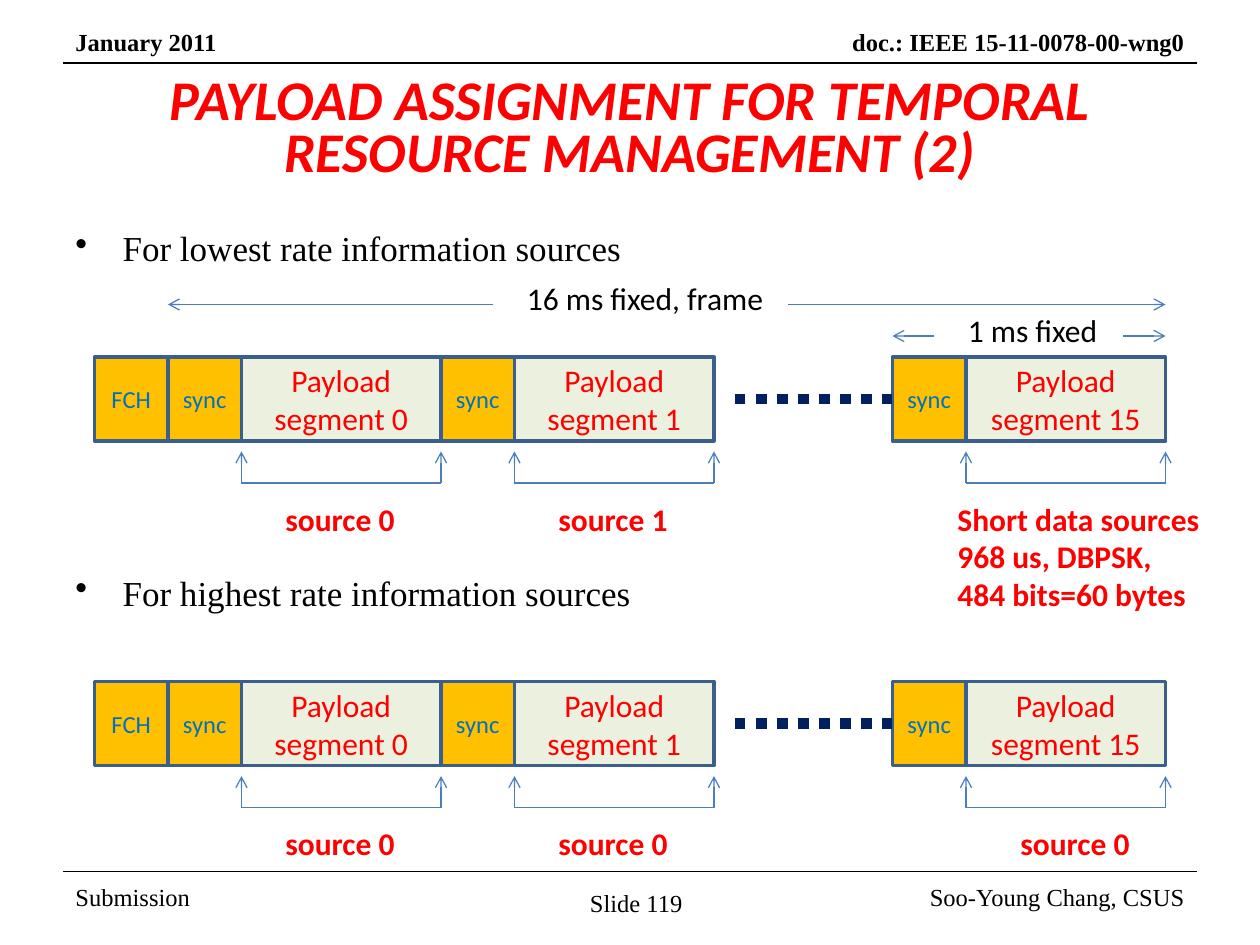
"""Build the slide on payload assignment for temporal resource management."""
import pptx
import pptx.dml.color
import pptx.enum.dml
import pptx.enum.shapes
import pptx.enum.text
import pptx.oxml
import pptx.oxml.ns
import pptx.util

Pt = pptx.util.Pt
ALIGN = pptx.enum.text.PP_ALIGN
ANCHOR = pptx.enum.text.MSO_ANCHOR
SERIF, SANS = "Times New Roman", "Calibri"
BLACK, RED, BLUE = "000000", "FF0000", "4B7EBC"

TITLE = "PAYLOAD ASSIGNMENT FOR TEMPORAL RESOURCE MANAGEMENT (2)"
BULLETS = [("For lowest rate information sources", 4), ("For highest rate information sources", 173)]
MARGINS = [
    ("January 2011", 36, 12, 102, 24, ALIGN.LEFT, True),
    ("doc.: IEEE 15-11-0078-00-wng0", 426, 12, 258, 24, ALIGN.RIGHT, True),
    ("Submission", 36, 498, 168, 29, ALIGN.LEFT, False),
    ("Soo-Young Chang, CSUS", 516, 498, 168, 29, ALIGN.RIGHT, False),
]
RULES = [36, 498]
SPANS = [
    ("16 ms fixed, frame", 294, 156, 151, 174, [(450, 666), (282, 96)]),
    ("1 ms fixed", 546, 174, 89, 192, [(534, 510), (642, 666)]),
]
SYNC_WIDTH, PAYLOAD_WIDTH, CELL_HEIGHT = 42, 114, 48
SEGMENTS = [(96, "Payload segment 0"), (252, "Payload segment 1"), (510, "Payload segment 15")]
SHORT_DATA = "Short data sources\n968 us, DBPSK,\n484 bits=60 bytes"
FRAMES = [
    (204, [("source 0", 18, 77), ("source 1", 18, 77), (SHORT_DATA, -12, 154)]),
    (389.5, [("source 0", 18, 77), ("source 0", 18, 77), ("source 0", 24, 77)]),
]


def color(value):
    return pptx.dml.color.RGBColor.from_string(value)


def write(shape, text, size, font, ink, align=ALIGN.LEFT, anchor=ANCHOR.TOP, bold=False, wrap=True):
    frame = shape.text_frame
    frame.text = text
    frame.word_wrap = wrap
    frame.vertical_anchor = anchor
    if not wrap:
        frame.auto_size = pptx.enum.text.MSO_AUTO_SIZE.SHAPE_TO_FIT_TEXT
    for para in frame.paragraphs:
        para.alignment = align
        for span in para.runs:
            span.font.size, span.font.name, span.font.bold = Pt(size), font, bold
            span.font.color.rgb = color(ink)
    return frame


def add_text(page, text, left, top, width, height, *style, **options):
    box = page.shapes.add_textbox(Pt(left), Pt(top), Pt(width), Pt(height))
    return write(box, text, *style, **options)


def add_line(page, start, end, ink=BLUE, width=0.75, arrow=False):
    line = page.shapes.add_connector(
        pptx.enum.shapes.MSO_CONNECTOR.STRAIGHT, *(Pt(value) for value in start + end))
    line.line.color.rgb = color(ink)
    line.line.width = Pt(width)
    if arrow:
        tail = pptx.oxml.parse_xml(f'<a:tailEnd {pptx.oxml.ns.nsdecls("a")} type="arrow"/>')
        line.line._get_or_add_ln().append(tail)
    line._element.spPr.append(pptx.oxml.parse_xml(f'<a:effectLst {pptx.oxml.ns.nsdecls("a")}/>'))
    return line


def add_cell(page, text, left, top, width, fill, size, ink):
    cell = page.shapes.add_shape(
        pptx.enum.shapes.MSO_SHAPE.RECTANGLE, Pt(left), Pt(top), Pt(width), Pt(CELL_HEIGHT))
    cell.shadow.inherit = False
    cell.fill.solid()
    cell.fill.fore_color.rgb = color(fill)
    cell.line.color.rgb = color("3A5F8C")
    cell.line.width = Pt(2)
    write(cell, text, size, SANS, ink, ALIGN.CENTER, ANCHOR.MIDDLE)
    return cell


def add_control(page, text, left, top):
    return add_cell(page, text, left, top, SYNC_WIDTH, "FFC000", 14, "0070C0")


def add_bracket(page, left, right, top):
    bottom = top + 18
    add_line(page, (left, bottom), (right, bottom))
    for x in (left, right):
        add_line(page, (x, bottom), (x, top), arrow=True)


def add_frame(page, top, sources):
    add_control(page, "FCH", SEGMENTS[0][0] - SYNC_WIDTH, top)
    for (left, segment), (source, offset, width) in zip(SEGMENTS, sources):
        sync = add_control(page, "sync", left, top)
        start = left + SYNC_WIDTH
        add_cell(page, segment, start, top, PAYLOAD_WIDTH, "EBF1DE", 18, RED)
        add_bracket(page, start, start + PAYLOAD_WIDTH, top + 54)
        add_text(page, source, start + offset, top + 78, width, 29, 18, SANS, RED, bold=True, wrap=False)
    middle = top + CELL_HEIGHT / 2
    dots = add_line(page, (420, middle), (left, middle), "002060", 6)
    dots.line.dash_style = pptx.enum.dml.MSO_LINE.ROUND_DOT
    dots.end_connect(sync, 1)


def add_bullets(page):
    text = "\n".join(words for words, gap in BULLETS)
    frame = add_text(page, text, 36, 126, 654, 372, 20, SERIF, BLACK)
    for para, (words, gap) in zip(frame.paragraphs, BULLETS):
        para.space_before = Pt(gap)
        props = para._p.get_or_add_pPr()
        props.set("marL", str(Pt(27)))
        props.set("indent", str(Pt(-27)))
        props.append(pptx.oxml.parse_xml(f'<a:buChar {pptx.oxml.ns.nsdecls("a")} char="•"/>'))


def main():
    deck = pptx.Presentation()
    deck.slide_width, deck.slide_height = Pt(720), Pt(540)
    page = deck.slides.add_slide(deck.slide_layouts[6])
    for y in RULES:
        add_line(page, (36, y), (684, y), BLACK)
    for text, left, top, width, height, align, bold in MARGINS:
        anchor = ANCHOR.TOP if bold else ANCHOR.MIDDLE
        add_text(page, text, left, top, width, height, 14, SERIF, BLACK, align, anchor, bold)
    add_text(page, "Slide 119", 330, 504, 68, 24, 14, SERIF, BLACK, wrap=False)

    title = add_text(page, TITLE, 36, 30, 648, 90, 32, SANS, RED, ALIGN.CENTER, ANCHOR.MIDDLE, True)
    title.paragraphs[0].line_spacing = Pt(30)
    title.paragraphs[0].runs[0].font.italic = True
    add_bullets(page)

    for text, left, top, width, y, arrows in SPANS:
        add_text(page, text, left, top, width, 29, 18, SANS, BLACK, wrap=False)
        for start, end in arrows:
            add_line(page, (start, y), (end, y), arrow=True)
    for top, sources in FRAMES:
        add_frame(page, top, sources)
    deck.save("out.pptx")


if __name__ == "__main__":
    main()
